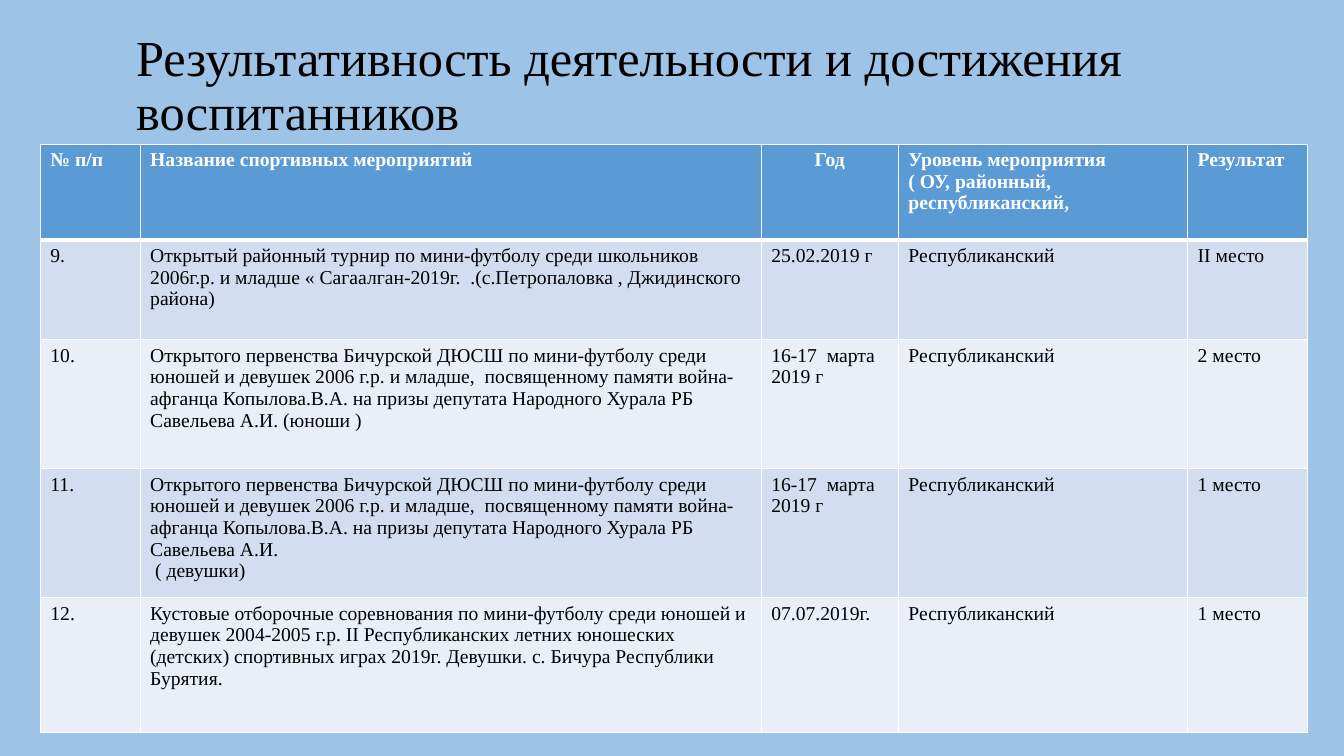
from dataclasses import dataclass
from typing import Any

from lxml import etree
from pptx import Presentation
from pptx import util as u
from pptx.dml import color
from pptx.enum import text
from pptx.oxml import ns

FONT = "Times New Roman"
WHITE, BLACK = "FFFFFF", "000000"
BACKGROUND, HEADER_FILL = "9DC3E6", "5B9BD5"
BAND_FILLS = ("D2DEEF", "EAEFF7")
COLUMN_WIDTHS = (0.99, 6.16, 1.36, 2.87, 1.19)
ROW_HEIGHTS = (0.95, 0.99, 1.28, 1.28, 1.34)
YEAR_COLUMN = 2
HEADINGS = (
    "№ п/п",
    "Название спортивных мероприятий",
    "Год",
    "Уровень мероприятия\n( ОУ, районный, республиканский,",
    "Результат",
)
CHAMPIONSHIP = (
    "Открытого первенства Бичурской ДЮСШ по мини-футболу среди юношей и девушек "
    "2006 г.р. и младше,  посвященному памяти война- афганца Копылова.В.А. "
    "на призы депутата Народного Хурала РБ Савельева А.И."
)


@dataclass
class Competition:
    number: str
    event: str
    date: str
    result: str
    level: str = "Республиканский"

    def cells(self) -> tuple[str, ...]:
        return self.number, self.event, self.date, self.level, self.result


COMPETITIONS = (
    Competition(
        "9.",
        "Открытый районный турнир по мини-футболу среди школьников 2006г.р. и младше "
        "« Сагаалган-2019г.  .(с.Петропаловка , Джидинского района)",
        "25.02.2019 г",
        "II место",
    ),
    Competition("10.", CHAMPIONSHIP + " (юноши )", "16-17  марта 2019 г", "2 место"),
    Competition("11.", CHAMPIONSHIP + "\n ( девушки)", "16-17  марта 2019 г", "1 место"),
    Competition(
        "12.",
        "Кустовые отборочные соревнования по мини-футболу среди юношей и девушек "
        "2004-2005 г.р. II Республиканских летних юношеских (детских) спортивных играх "
        "2019г. Девушки. с. Бичура Республики Бурятия.",
        "07.07.2019г.",
        "1 место",
    ),
)


def apply(target: Any, values: dict[str, Any]) -> None:
    for name, value in values.items():
        setattr(target, name, value)


def paint(fill: Any, hex_color: str) -> None:
    fill.solid()
    fill.fore_color.rgb = color.RGBColor.from_string(hex_color)


def write(frame: Any, wording: str, size: float, hex_color: str, bold: bool,
          paragraph_format: dict[str, Any]) -> None:
    frame.text = wording
    for paragraph in frame.paragraphs:
        apply(paragraph, paragraph_format)
        for run in paragraph.runs:
            apply(run.font, {"name": FONT, "size": u.Pt(size), "bold": bold})
            paint(run.font.fill, hex_color)


def outline(cell: Any, widths: dict[str, float]) -> None:
    properties = cell._tc.get_or_add_tcPr()
    for side, width in widths.items():
        line = etree.SubElement(properties, ns.qn(f"a:ln{side}"), w=str(u.Pt(width)))
        solid = etree.SubElement(line, ns.qn("a:solidFill"))
        etree.SubElement(solid, ns.qn("a:srgbClr"), val=WHITE)


def draw_title(slide: Any) -> None:
    title = slide.shapes.title
    apply(title, {"left": u.Inches(1.25), "top": u.Inches(0.41),
                  "width": u.Inches(11.5), "height": u.Inches(1.45)})
    write(title.text_frame, "Результативность деятельности и достижения воспитанников",
          36, BLACK, False, {"alignment": text.PP_ALIGN.LEFT, "line_spacing": 0.9})
    apply(title.text_frame, {"word_wrap": True, "margin_bottom": u.Inches(0.59),
                             "auto_size": text.MSO_AUTO_SIZE.NONE,
                             "vertical_anchor": text.MSO_ANCHOR.MIDDLE})


def draw_results(slide: Any) -> None:
    rows = [HEADINGS, *(competition.cells() for competition in COMPETITIONS)]
    results = slide.shapes.add_table(
        len(rows), len(HEADINGS), u.Inches(0.4), u.Inches(1.43),
        u.Inches(sum(COLUMN_WIDTHS)), u.Inches(sum(ROW_HEIGHTS))).table
    for column, width in zip(results.columns, COLUMN_WIDTHS):
        column.width = u.Inches(width)
    for row_index, (wordings, height) in enumerate(zip(rows, ROW_HEIGHTS)):
        results.rows[row_index].height = u.Inches(height)
        heading = row_index == 0
        fill = HEADER_FILL if heading else BAND_FILLS[(row_index - 1) % 2]
        borders = {"L": 1, "R": 1, "T": 3 if row_index == 1 else 1, "B": 3 if heading else 1}
        for column_index, wording in enumerate(wordings):
            cell = results.cell(row_index, column_index)
            centred = heading and column_index == YEAR_COLUMN
            alignment = text.PP_ALIGN.CENTER if centred else text.PP_ALIGN.LEFT
            write(cell.text_frame, wording, 14, WHITE if heading else BLACK, heading,
                  {"alignment": alignment})
            outline(cell, borders)
            paint(cell.fill, fill)


def main() -> None:
    deck = Presentation()
    apply(deck, {"slide_width": u.Inches(13.33), "slide_height": u.Inches(7.5)})
    slide = deck.slides.add_slide(deck.slide_layouts[5])
    paint(slide.background.fill, BACKGROUND)
    draw_title(slide)
    draw_results(slide)
    deck.save("out.pptx")


if __name__ == "__main__":
    main()
